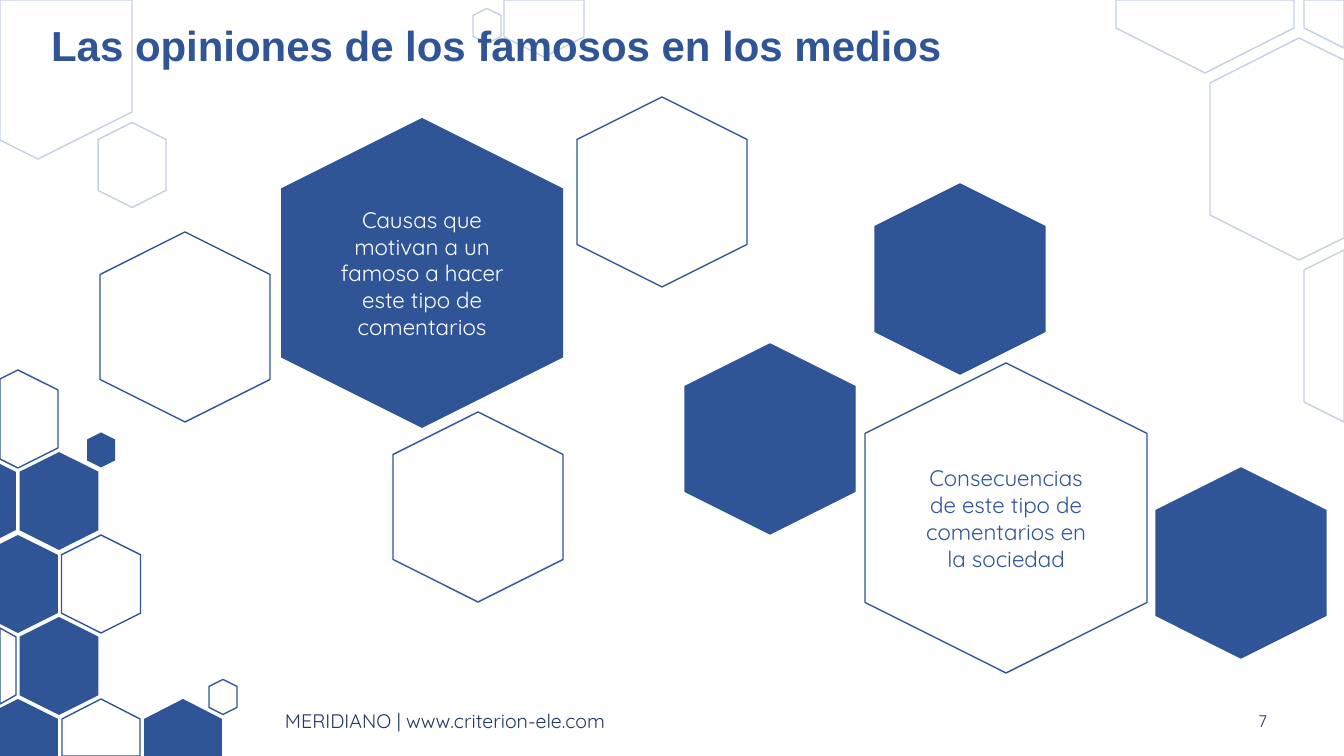
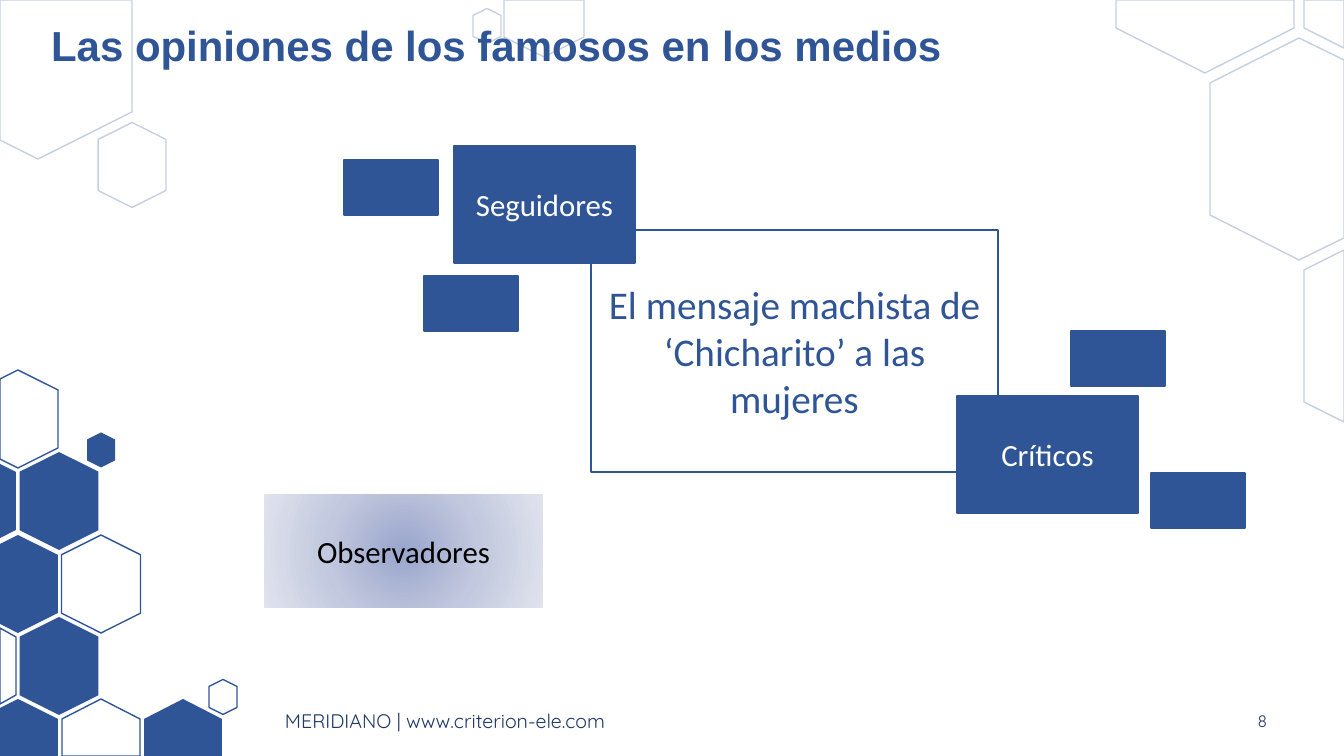
from dataclasses import dataclass
from typing import NamedTuple, Optional

from pptx import Presentation
from pptx.dml.color import RGBColor as Rgb
from pptx.enum.shapes import MSO_SHAPE as Geom
from pptx.enum.text import MSO_ANCHOR as Anchor, MSO_AUTO_SIZE as Auto, PP_ALIGN as Align
from pptx.oxml import parse_xml
from pptx.oxml.ns import nsdecls, qn
from pptx.util import Pt

# Scale: every length is in px
WIDE, HIGH = 1344, 756
SCALE = 12192000 / WIDE


def emu(px: float) -> int:
    return round(px * SCALE)


# Theme
@dataclass(frozen=True)
class Theme:
    blue: str = "2F5597"
    navy: str = "203864"
    white: str = "FFFFFF"
    black: str = "000000"
    glow: tuple = ((0, "99A5CC"), (50, "C2C8DE"), (100, "E1E4EE"))
    head: str = "Arial"
    hive: str = "Quicksand"
    body: str = "Calibri"
    title: int = 30
    topic: int = 28
    group: int = 22
    cell: int = 16
    foot: int = 14
    page: int = 12


T = Theme()


class Look(NamedTuple):
    fill: Optional[str] = None
    edge: Optional[str] = None
    alpha: int = 100
    glow: bool = False


class Note(NamedTuple):
    text: str
    font: str
    size: int
    color: str
    bold: bool = False


class Hex(NamedTuple):
    x: int  # centre
    y: int
    w: int
    h: int
    look: Look
    note: Optional[Note] = None


class Box(NamedTuple):
    x: int  # left
    y: int  # top
    w: int
    h: int
    look: Look
    note: Optional[Note] = None


SOLID = Look(T.blue)
EDGED = Look(T.blue, T.blue)
RING = Look(None, T.blue)
PAPER = Look(T.white, T.blue)
FAINT = Look(T.white, T.blue, 28)
GLOW = Look(None, T.white, glow=True)


# Formatting
def dress(shape, look: Look) -> None:
    shape.shadow.inherit = False
    if look.glow:
        stops = "".join(f'<a:gs pos="{at * 1000}"><a:srgbClr val="{rgb}"/></a:gs>'
                        for at, rgb in T.glow)
        shape.element.spPr.find(qn("a:prstGeom")).addnext(parse_xml(
            f'<a:gradFill {nsdecls("a")} rotWithShape="1"><a:gsLst>{stops}</a:gsLst>'
            '<a:path path="circle"><a:fillToRect l="50000" t="50000" r="50000" b="50000"/>'
            '</a:path></a:gradFill>'))
    elif look.fill:
        shape.fill.solid()
        shape.fill.fore_color.rgb = Rgb.from_string(look.fill)
    else:
        shape.fill.background()
    if not look.edge:
        shape.line.fill.background()
        return
    shape.line.width = Pt(1)
    shape.line.color.rgb = Rgb.from_string(look.edge)
    if look.alpha < 100:
        tint = shape.element.spPr.find(qn("a:ln")).find(".//" + qn("a:srgbClr"))
        tint.append(parse_xml(f'<a:alpha {nsdecls("a")} val="{look.alpha * 1000}"/>'))


def write(shape, note: Note, align=Align.CENTER, space: Optional[float] = None) -> None:
    frame = shape.text_frame
    form = {"word_wrap": True, "auto_size": Auto.NONE, "vertical_anchor": Anchor.MIDDLE}
    for key, val in form.items():
        setattr(frame, key, val)
    para = frame.paragraphs[0]
    para.alignment = align
    if space:
        para.line_spacing = space
    run = para.add_run()
    run.text = note.text
    for key, val in {"name": note.font, "size": Pt(note.size), "bold": note.bold}.items():
        setattr(run.font, key, val)
    run.font.color.rgb = Rgb.from_string(note.color)


# Hexagons, cut at the slide edge
def clip(pts: list, axis: int, lim: int, sign: int) -> list:
    out = []
    for a, b in zip(pts, pts[1:] + pts[:1]):
        da, db = sign * (lim - a[axis]), sign * (lim - b[axis])
        if da >= 0:
            out.append(a)
        if da * db < 0:
            t = da / (da - db)
            out.append((a[0] + t * (b[0] - a[0]), a[1] + t * (b[1] - a[1])))
    return out


def draw_hex(shapes, cell: Hex):
    x, y, w, h, look, note = cell
    if w / 2 <= x <= WIDE - w / 2 and h / 2 <= y <= HIGH - h / 2:
        # A preset hexagon lies flat, so it is turned upright
        shape = shapes.add_shape(Geom.HEXAGON, emu(x - h / 2), emu(y - w / 2), emu(h), emu(w))
        shape.rotation = 90
    else:
        side = h / 2 - w / 4
        pts = [(x, y - h / 2), (x + w / 2, y - side), (x + w / 2, y + side),
               (x, y + h / 2), (x - w / 2, y + side), (x - w / 2, y - side)]
        for axis, lim, sign in ((0, 0, -1), (0, WIDE, 1), (1, 0, -1), (1, HIGH, 1)):
            pts = clip(pts, axis, lim, sign)
        pts = [(round(px), round(py)) for px, py in pts]
        pen = shapes.build_freeform(*pts[0], scale=SCALE)
        pen.add_line_segments(pts[1:], close=True)
        shape = pen.convert_to_shape()
    dress(shape, look)
    if note:
        shape.element.txBody.find(qn("a:bodyPr")).set("vert", "vert270")
        write(shape, note)
    return shape


def draw_box(shapes, box: Box) -> None:
    shape = shapes.add_shape(Geom.RECTANGLE, *map(emu, box[:4]))
    dress(shape, box.look)
    if box.note:
        write(shape, box.note)


# Shared backdrop
def comb(row: int, col: int, look: Look) -> Hex:
    return Hex(round(18 + 41.3 * col), round(419 + 82.3 * row), 79, 98, look)


def tiny(x: int, y: int, look: Look) -> Hex:
    return Hex(x, y, 28, 35, look)


def large(x: int, y: int) -> Hex:
    return Hex(x, y, 179, 222, FAINT)


DECOR = [
    tiny(487, 26, FAINT), Hex(544, 8, 79, 98, FAINT),
    large(1205, -38), large(1394, -38), large(1299, 149), large(1394, 336),
    Hex(38, 42, 189, 234, FAINT), Hex(132, 165, 68, 85, FAINT),
    comb(0, 0, PAPER), comb(1, -1, SOLID), comb(1, 1, SOLID),
    comb(2, 0, SOLID), comb(2, 2, PAPER), comb(3, -1, PAPER), comb(3, 1, SOLID),
    comb(4, 0, SOLID), comb(4, 2, PAPER), comb(4, 4, SOLID),
    tiny(223, 697, PAPER), tiny(101, 450, SOLID),
]


def set_back(layout, slide) -> None:
    """Draw the backdrop and move it to the layout."""
    drawn = [draw_hex(slide.shapes, cell) for cell in DECOR]
    for num, shape in enumerate(drawn, 100):
        shape.element.nvSpPr.cNvPr.set("id", str(num))
        layout.shapes.element.append(shape.element)


# Title and footer
def frame(slide, page: int) -> None:
    title = slide.shapes.title
    spots = {"left": 41, "top": 18, "width": 1165, "height": 60}
    for key, val in spots.items():
        setattr(title, key, emu(val))
    write(title, Note("Las opiniones de los famosos en los medios",
                      T.head, T.title, T.blue, True), Align.LEFT, 0.9)
    foot = Note("MERIDIANO | www.criterion-ele.com", T.hive, T.foot, T.navy)
    num = Note(str(page), T.hive, T.page, T.navy)
    for x, w, note, align in ((275, 658, foot, Align.LEFT), (1177, 100, num, Align.RIGHT)):
        write(slide.shapes.add_textbox(emu(x), emu(701), emu(w), emu(40)), note, align)


# Slide contents
def big(x: int, y: int, look: Look, text: str, color: str) -> Hex:
    return Hex(x, y, 282, 310, look, Note(text, T.hive, T.cell, color))


def small(x: int, y: int, look: Look) -> Hex:
    return Hex(x, y, 170, 190, look)


def group(text: str, color: str) -> Note:
    return Note(text, T.body, T.group, color)


def chip(x: int, y: int) -> Box:
    return Box(x, y, 94, 55, EDGED)


HIVE = [
    big(1006, 518, RING, "Consecuencias de este tipo de comentarios en la sociedad", T.blue),
    big(422, 273, SOLID, "Causas que motivan a un famoso a hacer este tipo de comentarios",
        T.white),
    small(662, 192, RING), small(478, 507, RING), small(960, 279, EDGED),
    small(770, 439, EDGED), small(185, 327, RING), small(1241, 563, EDGED),
]

MAP = [
    Box(591, 230, 407, 242, PAPER,
        Note("El mensaje machista de ‘Chicharito’ a las mujeres", T.body, T.topic, T.blue)),
    Box(454, 146, 181, 117, EDGED, group("Seguidores", T.white)),
    Box(957, 396, 181, 117, EDGED, group("Críticos", T.white)),
    chip(424, 276), chip(344, 160), chip(1151, 473), chip(1071, 331),
    Box(263, 493, 281, 116, GLOW, group("Observadores", T.black)),
]


def main() -> None:
    deck = Presentation()
    deck.slide_width, deck.slide_height = emu(WIDE), emu(HIGH)
    layout = deck.slide_layouts.get_by_name("Title Only")
    for page, (draw, parts) in enumerate(((draw_hex, HIVE), (draw_box, MAP)), 7):
        slide = deck.slides.add_slide(layout)
        if page == 7:
            set_back(layout, slide)
        frame(slide, page)
        for part in parts:
            draw(slide.shapes, part)
    deck.save("out.pptx")


if __name__ == "__main__":
    main()
